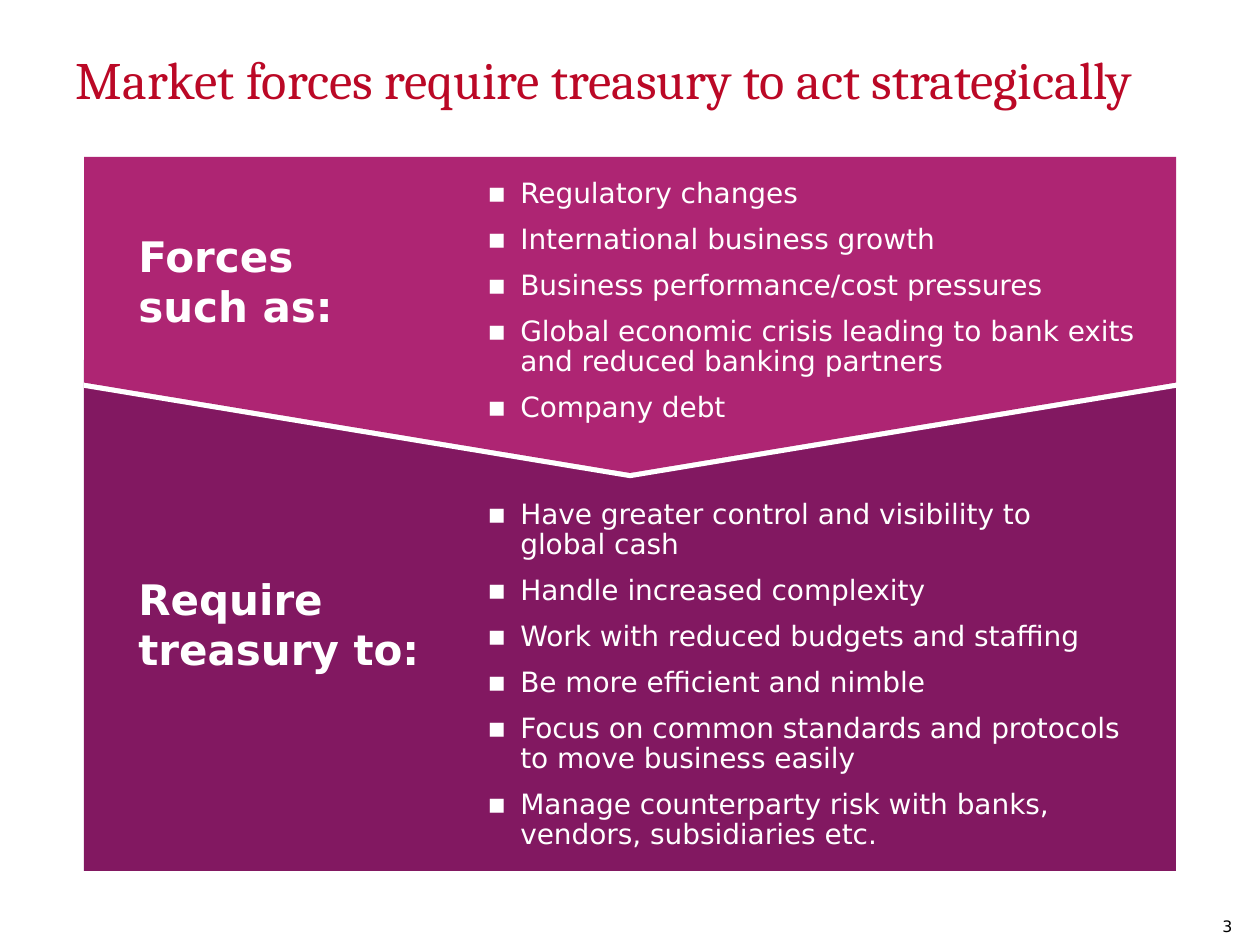
from dataclasses import dataclass

from lxml import etree
from pptx import Presentation
from pptx.dml.color import RGBColor
from pptx.enum.shapes import MSO_SHAPE
from pptx.oxml.ns import qn
from pptx.util import Emu, Pt

PIXELS_PER_INCH = 126
EMU_PER_PIXEL = 914400 / PIXELS_PER_INCH

RECTANGLE = MSO_SHAPE.RECTANGLE
PENTAGON = MSO_SHAPE.PENTAGON

RED = RGBColor(0xBB, 0x08, 0x26)
MAGENTA = RGBColor(0xAE, 0x25, 0x73)
PURPLE = RGBColor(0x82, 0x18, 0x61)
WHITE = RGBColor(0xFF, 0xFF, 0xFF)
BLACK = RGBColor(0x00, 0x00, 0x00)

SERIF = "Cambria"
SANS = "DejaVu Sans"

BAND_LEFT, BAND_WIDTH = 84, 1092
HEADING_LEFT, LIST_LEFT = 126, 475
BULLET_INDENT = 33


@dataclass(frozen=True)
class Frame:
    left: int
    top: int
    width: int
    height: int


@dataclass(frozen=True)
class Style:
    size: int
    color: RGBColor
    font: str = SANS
    bold: bool = False
    line_spacing: float = 1.0
    space_before: int = 0
    bullet: str = ""
    inset: bool = True


@dataclass(frozen=True)
class Section:
    heading: str
    heading_frame: Frame
    items: tuple[str, ...]
    list_frame: Frame


TITLE = Style(30, RED, SERIF, line_spacing=1.05, inset=False)
NUMBER = Style(9, BLACK)
HEADING = Style(24, WHITE, bold=True)
ITEM = Style(16, WHITE, line_spacing=0.9, space_before=9, bullet="▪")

SECTIONS = (
    Section(
        "Forces \nsuch as:",
        Frame(HEADING_LEFT, 224, 316, 136),
        (
            "Regulatory changes",
            "International business growth",
            "Business performance/cost pressures",
            "Global economic crisis leading to bank exits and reduced banking partners",
            "Company debt",
        ),
        Frame(LIST_LEFT, 173, 716, 372),
    ),
    Section(
        "Require treasury to:",
        Frame(HEADING_LEFT, 567, 349, 136),
        (
            "Have greater control and visibility to \nglobal cash",
            "Handle increased complexity",
            "Work with reduced budgets and staffing",
            "Be more efficient and nimble",
            "Focus on common standards and protocols to move business easily",
            "Manage counterparty risk with banks, vendors, subsidiaries etc.",
        ),
        Frame(LIST_LEFT, 494, 679, 372),
    ),
)


def px(value: int) -> Emu:
    return Emu(round(value * EMU_PER_PIXEL))


def place(frame: Frame) -> tuple[Emu, Emu, Emu, Emu]:
    return px(frame.left), px(frame.top), px(frame.width), px(frame.height)


def add_bullet(para, style: Style) -> None:
    properties = para._p.get_or_add_pPr()
    properties.set("marL", str(px(BULLET_INDENT)))
    properties.set("indent", str(-px(BULLET_INDENT)))
    color = etree.SubElement(properties, qn("a:buClr"))
    etree.SubElement(color, qn("a:srgbClr"), val=str(style.color))
    etree.SubElement(properties, qn("a:buFont"), typeface=style.font)
    etree.SubElement(properties, qn("a:buChar"), char=style.bullet)


def add_text(page, frame: Frame, lines: tuple[str, ...], style: Style) -> None:
    text = page.shapes.add_textbox(*place(frame)).text_frame
    text.word_wrap = True
    if not style.inset:
        text.margin_left = text.margin_right = 0
        text.margin_top = text.margin_bottom = 0
    for index, line in enumerate(lines):
        para = text.add_paragraph() if index else text.paragraphs[0]
        para.text = line
        if style.bullet:
            add_bullet(para, style)
        para.line_spacing = style.line_spacing
        para.space_before = Pt(style.space_before)
        para.font.size = Pt(style.size)
        para.font.name = style.font
        para.font.bold = style.bold
        para.font.color.rgb = style.color


def add_band(page, kind: MSO_SHAPE, frame: Frame, color: RGBColor):
    band = page.shapes.add_shape(kind, *place(frame))
    band.shadow.inherit = False
    band.fill.solid()
    band.fill.fore_color.rgb = color
    band.line.fill.background()
    return band


def add_down_arrow(page, top: int, height: int, color: RGBColor) -> None:
    """Pentagon turned to point down, with a white edge cast below it."""
    offset = (BAND_WIDTH - height) // 2
    frame = Frame(BAND_LEFT + offset, top - offset, height, BAND_WIDTH)
    arrow = add_band(page, PENTAGON, frame, color)
    arrow.rotation = 90
    arrow.adjustments[0] = 0.286
    effects = arrow._element.spPr.find(qn("a:effectLst"))
    shadow = etree.SubElement(
        effects, qn("a:outerShdw"), blurRad="0", dist=str(Pt(3)),
        dir="5400000", algn="t", rotWithShape="0",
    )
    etree.SubElement(shadow, qn("a:srgbClr"), val=str(WHITE))


def main() -> None:
    deck = Presentation()
    deck.slide_width, deck.slide_height = px(1260), px(945)
    page = deck.slides.add_slide(deck.slide_layouts[6])

    # Page number and title
    add_text(page, Frame(1210, 911, 88, 81), ("3",), NUMBER)
    add_text(page, Frame(76, 44, 1163, 158),
             ("Market forces require treasury to act strategically",), TITLE)

    # Coloured bands
    add_band(page, RECTANGLE, Frame(BAND_LEFT, 360, BAND_WIDTH, 511), PURPLE)
    add_down_arrow(page, 157, 316, MAGENTA)

    # Headings and lists
    for section in SECTIONS:
        add_text(page, section.heading_frame, (section.heading,), HEADING)
        add_text(page, section.list_frame, section.items, ITEM)

    deck.save("out.pptx")


if __name__ == "__main__":
    main()
